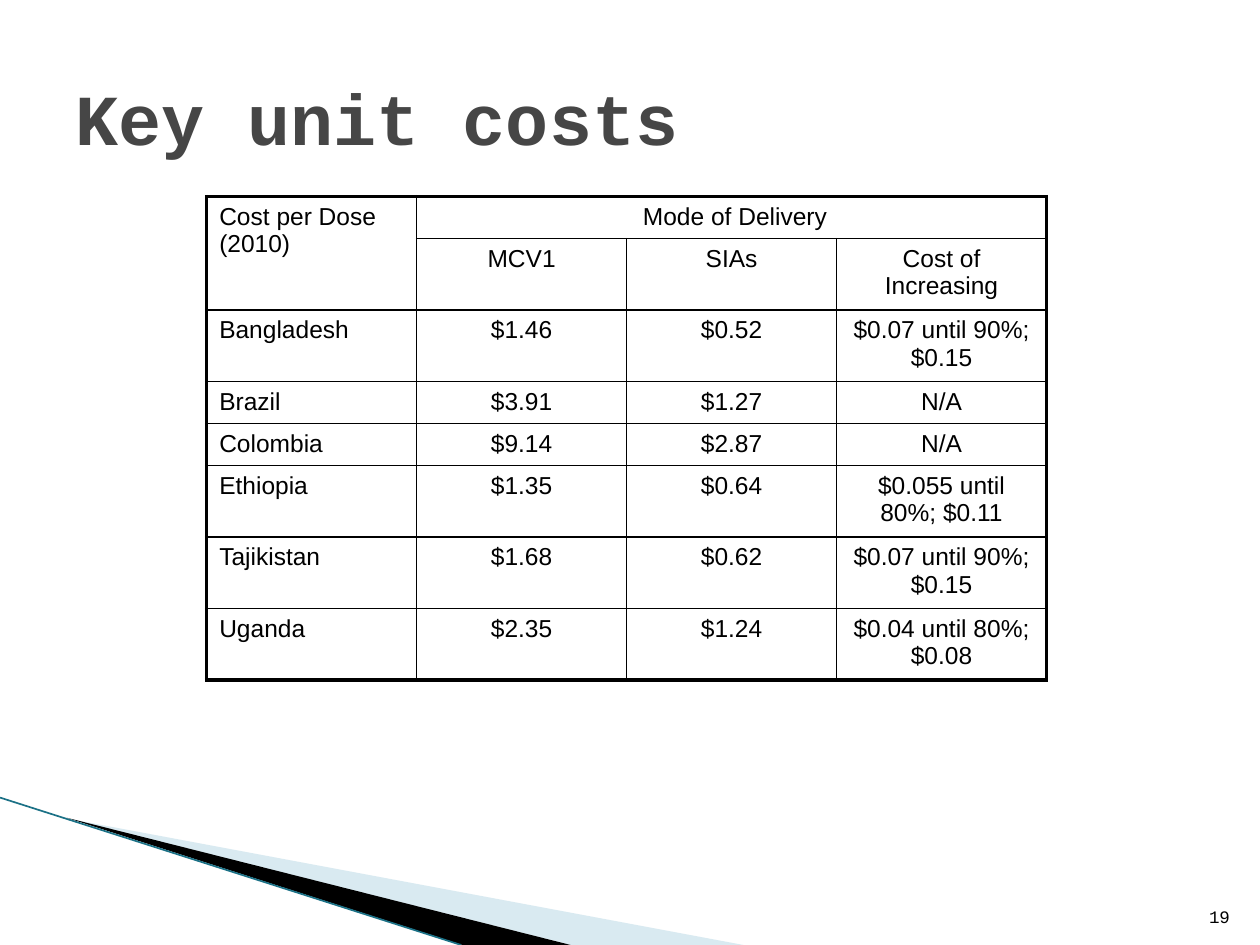
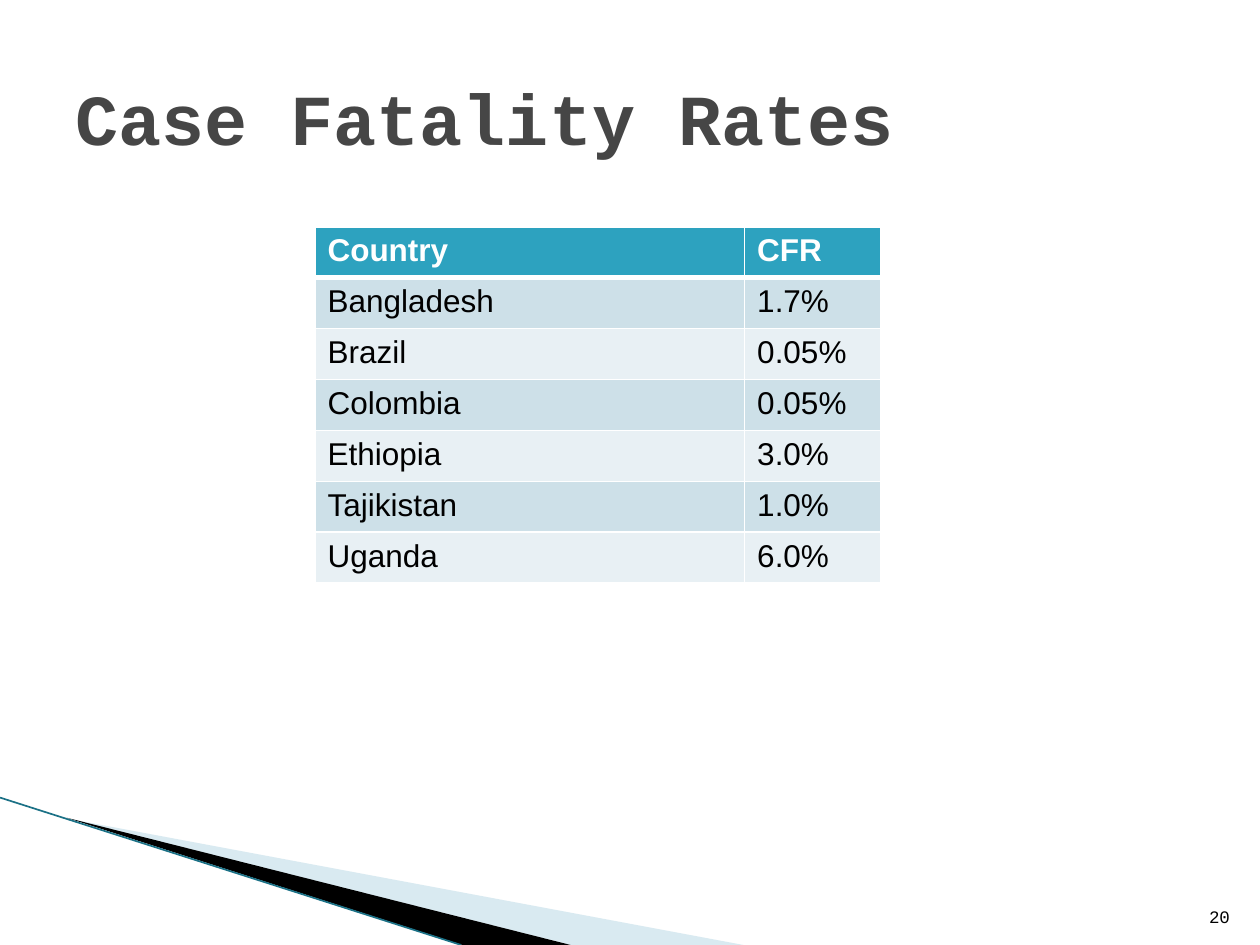
from dataclasses import dataclass

from lxml.etree import SubElement
from pptx import Presentation
from pptx.dml.color import RGBColor
from pptx.enum.shapes import MSO_CONNECTOR
from pptx.enum.text import MSO_ANCHOR, PP_ALIGN
from pptx.oxml.ns import qn
from pptx.util import Inches, Pt


@dataclass(frozen=True)
class Theme:
    title_font: str = "Courier New"
    body_font: str = "Arial"
    title_size: float = 41
    cost_size: float = 14
    rate_size: float = 18
    number_size: float = 10
    title: str = "464646"
    black: str = "000000"
    white: str = "FFFFFF"
    swoosh: str = "A0CBDC"
    swoosh_line: str = "1B7186"
    header: str = "2DA2BF"
    band_dark: str = "CDE0E8"
    band_light: str = "E8F0F4"


THEME = Theme()

COSTS = [
    ["Cost per Dose (2010)", " Mode of Delivery", "", ""],
    ["", "MCV1", "SIAs", "Cost of Increasing"],
    ["Bangladesh", "$1.46", "$0.52", "$0.07 until 90%; $0.15"],
    ["Brazil", "$3.91", "$1.27", "N/A"],
    ["Colombia", "$9.14", "$2.87", "N/A"],
    ["Ethiopia", "$1.35", "$0.64", "$0.055 until 80%; $0.11"],
    ["Tajikistan", "$1.68", "$0.62", "$0.07 until 90%; $0.15"],
    ["Uganda", "$2.35", "$1.24", "$0.04 until 80%; $0.08"],
]

RATES = [
    ["Country", "CFR"],
    ["Bangladesh", "1.7%"],
    ["Brazil", "0.05%"],
    ["Colombia", "0.05%"],
    ["Ethiopia", "3.0%"],
    ["Tajikistan", "1.0%"],
    ["Uganda", "6.0%"],
]


def rgb(color):
    return RGBColor.from_string(color)


def write(tf, text, font, size, color, bold=False, align=PP_ALIGN.LEFT):
    p = tf.paragraphs[0]
    p.alignment = align
    r = p.add_run()
    r.text = text
    r.font.name = font
    r.font.size = Pt(size)
    r.font.bold = bold
    r.font.color.rgb = rgb(color)


def add_wedge(slide, points, color, opacity=100):
    """Draw a filled polygon through points given in inches."""
    start, *rest = [(Inches(x), Inches(y)) for x, y in points]
    builder = slide.shapes.build_freeform(*start)
    builder.add_line_segments(rest, close=True)
    sp = builder.convert_to_shape()
    sp.shadow.inherit = False
    sp.line.fill.background()
    sp.fill.solid()
    sp.fill.fore_color.rgb = rgb(color)
    if opacity < 100:
        clr = sp.fill._xPr.find(qn("a:solidFill"))[0]
        SubElement(clr, qn("a:alpha"), val=str(opacity * 1000))


def add_swoosh(slide):
    add_wedge(slide, [(0.55, 6.5), (5.9, 7.5), (4.53, 7.5)], THEME.swoosh, 40)
    add_wedge(slide, [(0.53, 6.49), (4.53, 7.5), (3.67, 7.5)], THEME.black)
    line = slide.shapes.add_connector(
        MSO_CONNECTOR.STRAIGHT, Inches(0), Inches(6.33), Inches(3.66), Inches(7.5))
    line.line.color.rgb = rgb(THEME.swoosh_line)
    line.line.width = Pt(0.95)
    SubElement(line._element.spPr, qn("a:effectLst"))


def add_slide(prs, title, number):
    slide = prs.slides.add_slide(prs.slide_layouts[5])
    add_swoosh(slide)

    sp = slide.shapes.title
    sp.left, sp.top, sp.width, sp.height = map(Inches, (0.5, 0.3, 9, 1.25))
    sp.text_frame.vertical_anchor = MSO_ANCHOR.MIDDLE
    write(sp.text_frame, title, THEME.title_font, THEME.title_size, THEME.title, bold=True)

    box = slide.shapes.add_textbox(*map(Inches, (9.46, 7.01, 0.4, 0.4)))
    tf = box.text_frame
    tf.word_wrap = True
    tf.vertical_anchor = MSO_ANCHOR.BOTTOM
    write(tf, str(number), THEME.title_font, THEME.number_size, THEME.black,
          align=PP_ALIGN.RIGHT)
    return slide


def add_table(slide, rows, left, top, widths, row_height, height):
    """Add an unstyled table, sized in inches; rows grow to fit their text."""
    frame = slide.shapes.add_table(
        len(rows), len(widths), Inches(left), Inches(top),
        Inches(sum(widths)), Inches(height))
    table = frame.table
    table.first_row = table.horz_banding = False
    for column, width in zip(table.columns, widths):
        column.width = Inches(width)
    for row in table.rows:
        row.height = Inches(row_height)
    frame.height = Inches(height)
    return table


def set_borders(cell, color, left=1, right=1, top=1, bottom=1):
    """Set the four border widths in points; call before the cell gets its fill."""
    tcPr = cell._tc.get_or_add_tcPr()
    for side, width in zip("LRTB", (left, right, top, bottom)):
        ln = SubElement(tcPr, qn(f"a:ln{side}"), w=str(Pt(width)))
        SubElement(SubElement(ln, qn("a:solidFill")), qn("a:srgbClr"), val=color)


def add_cost_table(slide):
    table = add_table(slide, COSTS, 1.64, 1.56, [5 / 3] * 4, 0.2, 3.83)
    table.cell(0, 0).merge(table.cell(1, 0))
    table.cell(0, 1).merge(table.cell(0, 3))

    def weight(on_edge):
        return 2.25 if on_edge else 1

    for i, row in enumerate(COSTS):
        for j, text in enumerate(row):
            cell = table.cell(i, j)
            set_borders(cell, THEME.black, weight(j == 0),
                        weight(j + cell.span_width == len(row)),
                        weight(i == 0), weight(i + 1 == len(COSTS)))
            cell.fill.background()
            if text:
                write(cell.text_frame, text, THEME.body_font, THEME.cost_size, THEME.black,
                      align=PP_ALIGN.CENTER if j else PP_ALIGN.LEFT)


def add_rate_table(slide):
    table = add_table(slide, RATES, 2.5, 1.8, [3.41, 1.08], 2.83 / len(RATES), 2.83)
    table.first_row = True
    for i, row in enumerate(RATES):
        is_header = i == 0
        band = THEME.band_dark if i % 2 else THEME.band_light
        for j, text in enumerate(row):
            cell = table.cell(i, j)
            set_borders(cell, THEME.white, top=3 if i == 1 else 1,
                        bottom=3 if is_header else 1)
            cell.fill.solid()
            cell.fill.fore_color.rgb = rgb(THEME.header if is_header else band)
            write(cell.text_frame, text, THEME.body_font, THEME.rate_size,
                  THEME.white if is_header else THEME.black, bold=is_header)


def main():
    prs = Presentation()
    prs.slide_width, prs.slide_height = Inches(10), Inches(7.5)
    add_cost_table(add_slide(prs, "Key unit costs", 19))
    add_rate_table(add_slide(prs, "Case Fatality Rates", 20))
    prs.save("out.pptx")


if __name__ == "__main__":
    main()
